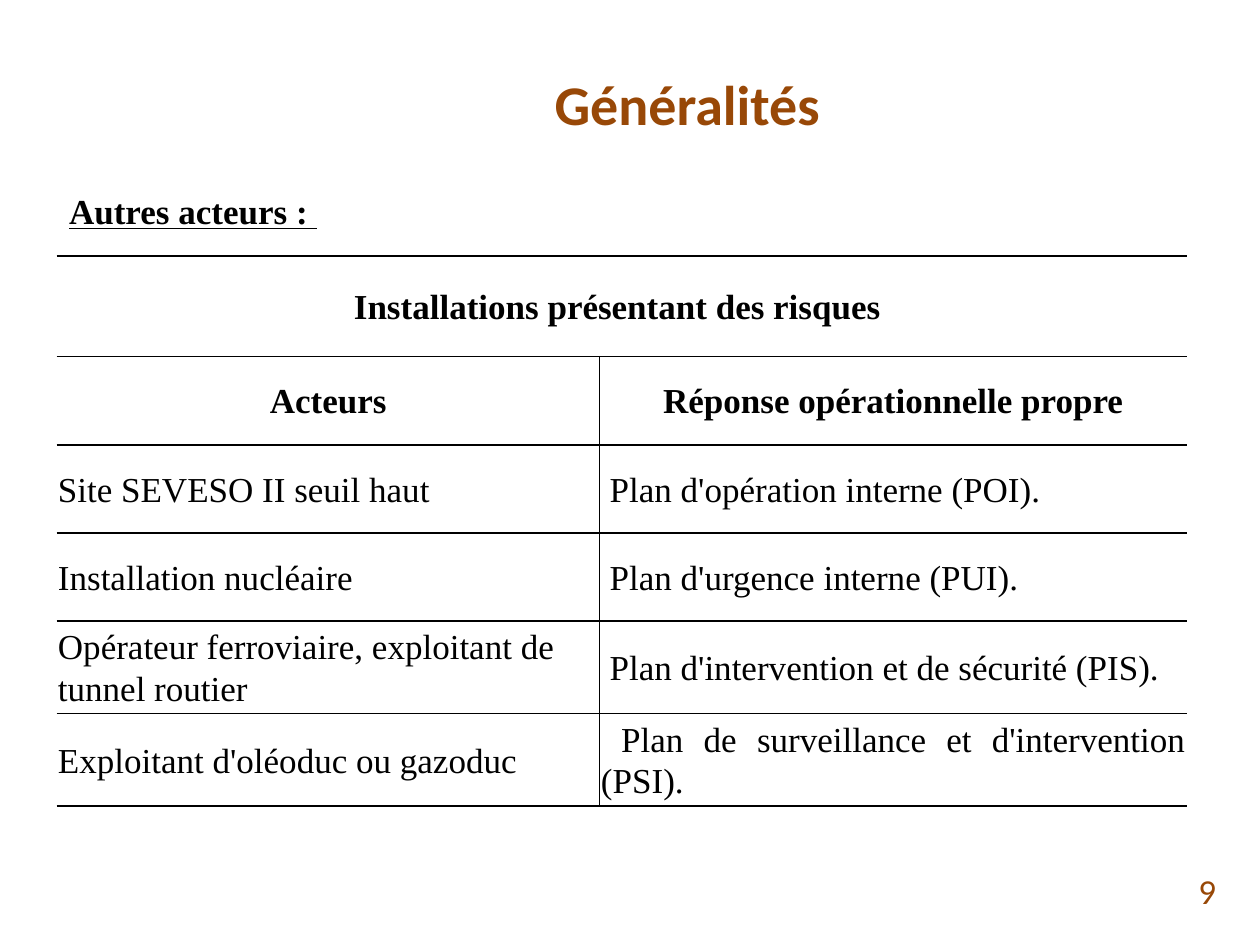
import pptx
import pptx.util
import pptx.dml.color
import pptx.enum.text
import pptx.oxml
import pptx.oxml.ns
from pptx.util import Inches

COLORS = {"brown": "984807", "black": "000000"}
ALIGN = pptx.enum.text.PP_ALIGN
MIDDLE = pptx.enum.text.MSO_ANCHOR.MIDDLE


def write_text(frame, text, font, size, color, align, bold=False, spacing=None):
    para = frame.paragraphs[0]
    para.text = text
    para.alignment = align
    para.line_spacing = spacing
    para.font.name = font
    para.font.size = pptx.util.Pt(size)
    para.font.bold = bold
    para.font.color.rgb = pptx.dml.color.RGBColor.from_string(COLORS[color])
    return para


def set_borders(cell, visible_sides):
    properties = cell._tc.get_or_add_tcPr()
    for index, side in enumerate("LRTB"):
        paint = "<a:noFill/>"
        if side in visible_sides:
            paint = f'<a:solidFill><a:srgbClr val="{COLORS["black"]}"/></a:solidFill>'
        line = pptx.oxml.parse_xml(
            f'<a:ln{side} {pptx.oxml.ns.nsdecls("a")} w="12700">{paint}</a:ln{side}>'
        )
        properties.insert(index, line)


deck = pptx.Presentation()
deck.slide_width = Inches(10)
deck.slide_height = Inches(7.5)
page = deck.slides.add_slide(deck.slide_layouts[6])

labels = [
    ("Généralités", (1.22, 0.3, 8.47, 1.03), "Calibri", 32, "brown", ALIGN.CENTER, True, None),
    ("9", (7.42, 6.87, 2.33, 0.4), "Calibri", 20, "brown", ALIGN.RIGHT, False, None),
    ("Autres acteurs : ", (0.45, 1.44, 8.96, 0.44), "Times New Roman", 20, "black",
     ALIGN.JUSTIFY, True, 1.07),
]
for text, place, font, size, color, align, bold, spacing in labels:
    box = page.shapes.add_textbox(*[Inches(length) for length in place])
    box.text_frame.word_wrap = True
    box.text_frame.vertical_anchor = MIDDLE
    para = write_text(box.text_frame, text, font, size, color, align, bold, spacing)
para.font.underline = True

rows = [
    ("Installations présentant des risques ", ""),
    ("Acteurs", "Réponse opérationnelle propre"),
    ("Site SEVESO II seuil haut ", " Plan d'opération interne (POI). "),
    ("Installation nucléaire ", " Plan d'urgence interne (PUI). "),
    ("Opérateur ferroviaire, exploitant de tunnel routier",
     " Plan d'intervention et de sécurité (PIS). "),
    ("Exploitant d'oléoduc ou gazoduc ", " Plan de surveillance et d'intervention (PSI)."),
]
row_heights = [0.8, 0.7, 0.7, 0.7, 0.73, 0.73]
column_widths = [4.31, 4.66]

table = page.shapes.add_table(
    len(rows), len(column_widths), Inches(0.45), Inches(2.03),
    Inches(sum(column_widths)), Inches(sum(row_heights)),
).table
table.first_row = False
table.horz_banding = False
for column, width in zip(table.columns, column_widths):
    column.width = Inches(width)
for row, height in zip(table.rows, row_heights):
    row.height = Inches(height)
table.cell(0, 0).merge(table.cell(0, 1))

for row_index, texts in enumerate(rows):
    header = row_index < 2
    for column_index, text in enumerate(texts):
        cell = table.cell(row_index, column_index)
        cell.fill.background()
        cell.vertical_anchor = MIDDLE
        cell.margin_left = cell.margin_right = Inches(0.01)
        cell.margin_top = cell.margin_bottom = Inches(0.01)
        inner_side = "" if row_index == 0 else "RL"[column_index]
        set_borders(cell, "TB" + inner_side)
        if cell.is_spanned:
            continue
        align = ALIGN.CENTER if header else ALIGN.JUSTIFY
        if text.startswith("Opérateur"):
            align = ALIGN.LEFT
        write_text(cell.text_frame, text, "Times New Roman", 20, "black", align, header, 1.07)

deck.save("out.pptx")
